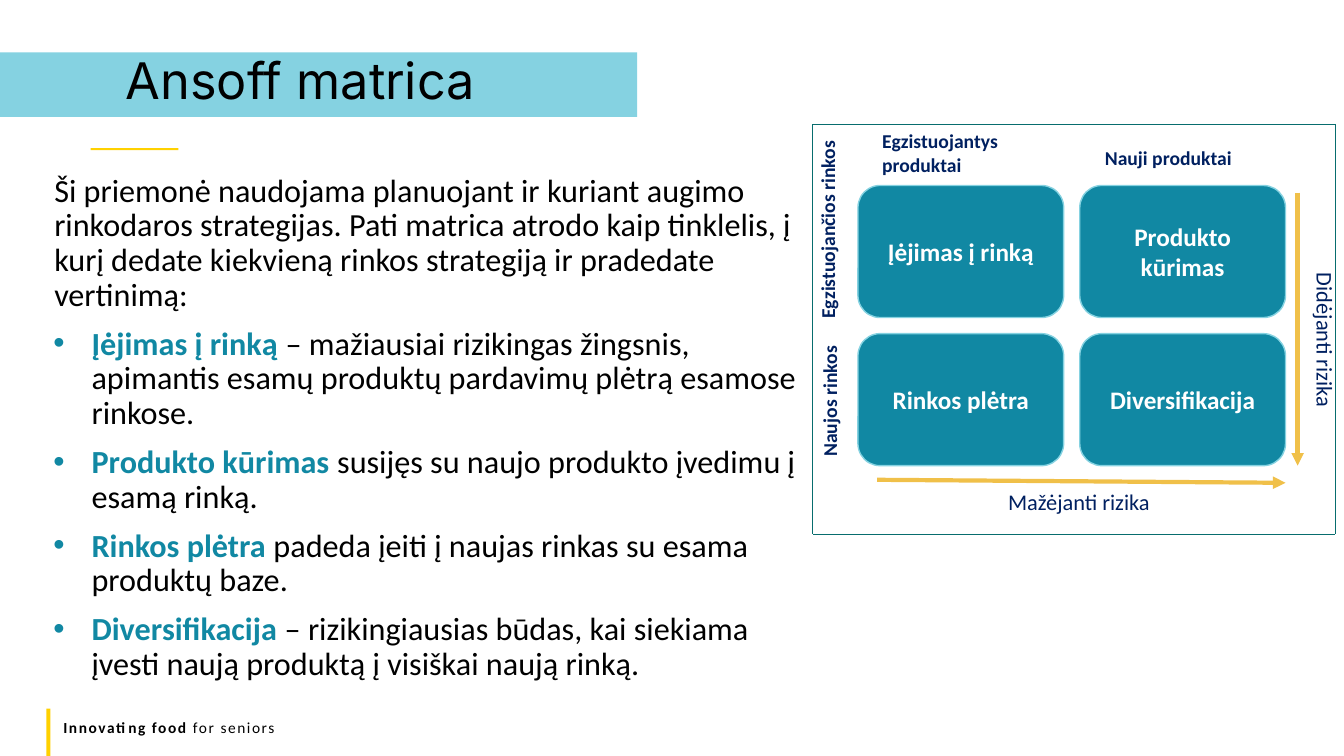
from lxml import etree
from pptx import Presentation
from pptx.dml.color import RGBColor
from pptx.enum.shapes import MSO_CONNECTOR, MSO_SHAPE
from pptx.enum.text import MSO_ANCHOR, PP_ALIGN
from pptx.oxml.ns import qn
from pptx.util import Pt

EMU_PER_PX = 9144  # 100 px to the inch
RECTANGLE = MSO_SHAPE.RECTANGLE
ROUNDED = MSO_SHAPE.ROUNDED_RECTANGLE
STRAIGHT = MSO_CONNECTOR.STRAIGHT
TOP, MIDDLE = MSO_ANCHOR.TOP, MSO_ANCHOR.MIDDLE
LEFT, CENTER = PP_ALIGN.LEFT, PP_ALIGN.CENTER

COLORS = {
    "black": "000000",
    "white": "FFFFFF",
    "yellow": "FFD100",
    "sky": "85D2E1",
    "teal": "1188A3",
    "navy": "002060",
    "gold": "F0C049",
    "frame": "086D6E",
}


def px(value):
    return round(value * EMU_PER_PX)


def color(name):
    return RGBColor.from_string(COLORS[name])


class SlideBuilder:
    """Holds the text style and the slide being drawn."""

    def __init__(self, slide, font_name):
        self.slide = slide
        self.font_name = font_name

    def block(self, box, fill, kind=RECTANGLE, line=None):
        shape = self.slide.shapes.add_shape(kind, *map(px, box))
        shape.shadow.inherit = False
        shape.fill.solid()
        shape.fill.fore_color.rgb = color(fill)
        if line:
            shape.line.color.rgb = color(line)
            shape.line.width = Pt(1)
        else:
            shape.line.fill.background()
        return shape

    def text_box(self, box, vertical=None):
        shape = self.slide.shapes.add_textbox(*map(px, box))
        if vertical:
            shape.text_frame._txBody.bodyPr.set("vert", vertical)
        return shape

    def add_text(self, shape, paragraphs, size, ink, anchor=TOP, align=LEFT, font_name=None,
                 bold=False, tracking=None, **paragraph_format):
        """Each paragraph is (margin, indent, bullet, runs); a run is (text, own format)."""
        frame = shape.text_frame
        frame.word_wrap = True
        frame.vertical_anchor = anchor
        for index, (margin, indent, bullet, runs) in enumerate(paragraphs):
            paragraph = frame.add_paragraph() if index else frame.paragraphs[0]
            properties = paragraph._p.get_or_add_pPr()
            properties.set("marL", str(px(margin)))
            properties.set("indent", str(px(indent)))
            if bullet:
                etree.SubElement(properties, qn("a:buFont")).set("typeface", "Arial")
                etree.SubElement(properties, qn("a:buChar")).set("char", bullet)
            paragraph.alignment = align
            for name, value in paragraph_format.items():
                if index or name != "space_before":
                    setattr(paragraph, name, value)
            for text, own in runs:
                run = paragraph.add_run()
                run.text = text
                values = {"name": font_name or self.font_name, "size": Pt(size),
                          "bold": own.get("bold", bold)}
                for name, value in values.items():
                    setattr(run.font, name, value)
                run.font.color.rgb = color(own.get("ink", ink))
                if tracking:
                    run._r.get_or_add_rPr().set("spc", str(tracking))

    def label(self, box, text, size, bold=False, vertical=None):
        self.add_text(self.text_box(box, vertical), [(0, 0, None, [(text, {})])],
                      size, "navy", bold=bold)

    def line(self, start, end, ink, width, arrow=False):
        connector = self.slide.shapes.add_connector(STRAIGHT, *map(px, start + end))
        connector.line.color.rgb = color(ink)
        connector.line.width = Pt(width)
        if arrow:
            etree.SubElement(connector.line._get_or_add_ln(), qn("a:tailEnd")).set("type", "triangle")
        etree.SubElement(connector._element.spPr, qn("a:effectLst"))


def main():
    presentation = Presentation()
    presentation.slide_width = px(1333)
    presentation.slide_height = px(750)
    slide = presentation.slides.add_slide(presentation.slide_layouts[6])
    builder = SlideBuilder(slide, "Calibri")

    # Accent rule and footer
    builder.block((90, 147, 87, 2), "yellow")
    footer = builder.text_box((53, 707, 1200, 29))
    builder.add_text(footer, [(0, 0, None, [("Innovating food ", {"bold": True}), ("for seniors", {})])],
                     11, "black", tracking=110)
    builder.block((46, 703, 4, 47), "yellow")

    # Title band
    band = builder.block((0, 52, 632, 64), "sky")
    builder.add_text(band, [(115, 0, None, [("Ansoff matrica", {})])], 36, "black",
                     anchor=MIDDLE, font_name="Inter", line_spacing=0.8)

    # Introduction and the four strategies
    intro = ("Ši priemonė naudojama planuojant ir kuriant augimo rinkodaros strategijas. "
             "Pati matrica atrodo kaip tinklelis, į kurį dedate kiekvieną rinkos strategiją "
             "ir pradedate vertinimą:")
    strategies = [
        ("Įėjimas į rinką ", "– mažiausiai rizikingas žingsnis, apimantis esamų produktų "
                             "pardavimų plėtrą esamose rinkose."),
        ("Produkto kūrimas ", "susijęs su naujo produkto įvedimu į esamą rinką."),
        ("Rinkos plėtra ", "padeda įeiti į naujas rinkas su esama produktų baze."),
        ("Diversifikacija ", "– rizikingiausias būdas, kai siekiama įvesti naują produktą "
                             "į visiškai naują rinką."),
    ]
    paragraphs = [(25, 0, None, [(intro, {})])]
    for name, description in strategies:
        runs = [(name, {"bold": True, "ink": "teal"}), (description, {})]
        paragraphs.append((62, -38, "•", runs))
    builder.add_text(builder.text_box((19, 168, 783, 568)), paragraphs, 23, "black",
                     line_spacing=0.9, space_before=Pt(10))

    # Matrix cells
    matrix = [["Įėjimas į rinką", "Produkto kūrimas"], ["Rinkos plėtra", "Diversifikacija"]]
    for row, names in enumerate(matrix):
        for column, name in enumerate(names):
            cell = builder.block((851 + 220 * column, 184 + 147 * row, 204, 131),
                                 "teal", ROUNDED, "sky")
            builder.add_text(cell, [(0, 0, None, [(name, {})])], 18, "white",
                             anchor=MIDDLE, align=CENTER, bold=True)

    # Risk arrows
    builder.line((1287, 191), (1287, 462), "gold", 3, arrow=True)
    builder.line((870, 476), (1275, 479), "gold", 3, arrow=True)

    # Axis labels
    builder.label((865, 123, 190, 57), "Egzistuojantys produktai", 14, bold=True)
    builder.label((1086, 140, 190, 34), "Nauji produktai", 14, bold=True)
    builder.label((804, 123, 44, 203), "Egzistuojančios rinkos", 14, bold=True, vertical="vert270")
    builder.label((806, 286, 44, 177), "Naujos rinkos", 14, bold=True, vertical="vert270")
    builder.label((990, 479, 165, 37), "Mažėjanti rizika", 16)
    builder.label((1286, 261, 47, 215), "Didėjanti rizika", 16, vertical="vert")

    # Frame around the matrix
    left, top, right, bottom = 806, 123, 1324, 530
    corners = [(left, top), (right, top), (right, bottom), (left, bottom)]
    for index, corner in enumerate(corners):
        builder.line(corners[index - 1], corner, "frame", 0.5)

    presentation.save("out.pptx")


if __name__ == "__main__":
    main()
